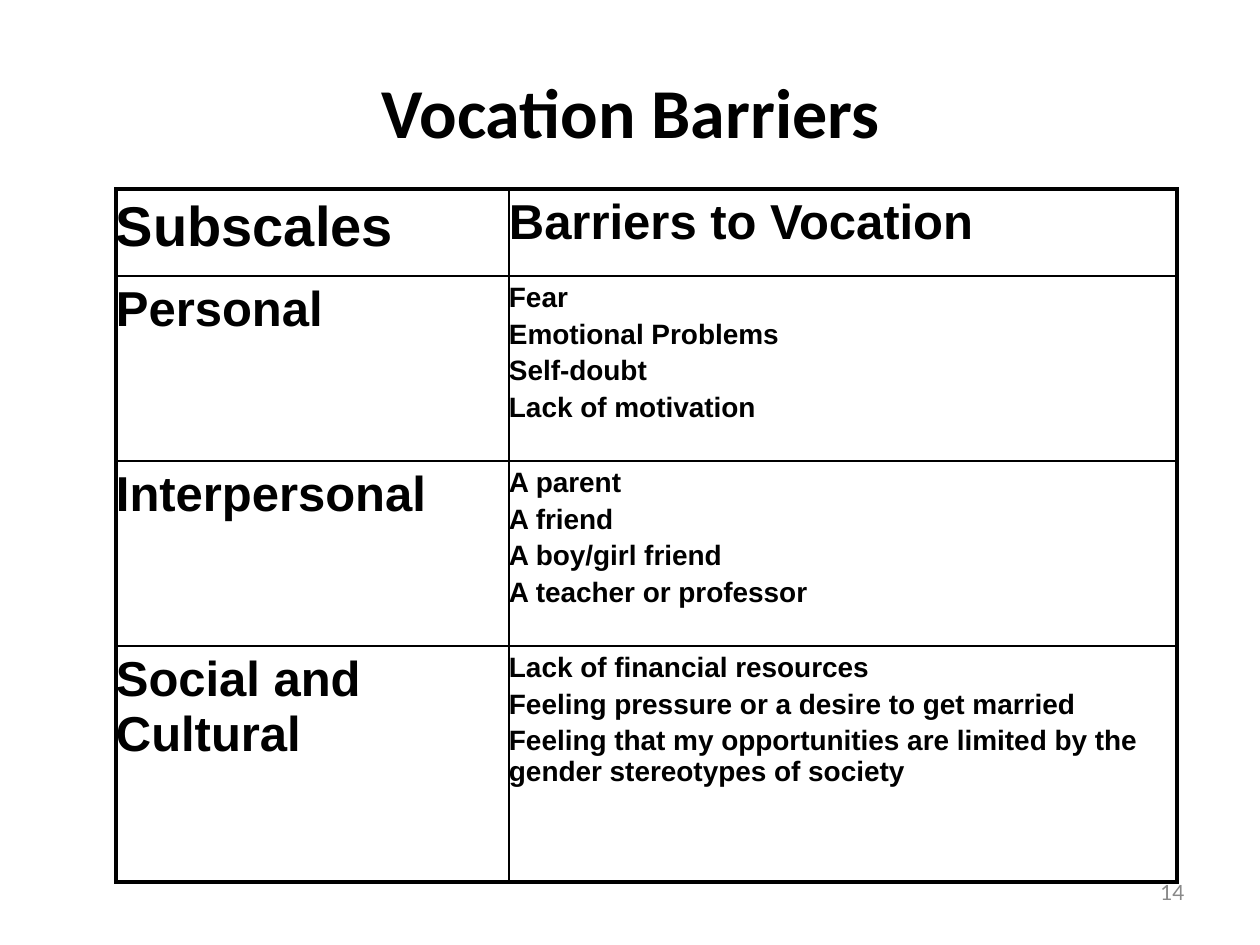
from lxml import etree
from pptx import Presentation
from pptx.dml.color import RGBColor
from pptx.enum.text import MSO_ANCHOR, PP_ALIGN
from pptx.oxml.ns import qn
from pptx.util import Emu, Pt

PX = 914400 // 126  # EMU in one px
BLACK = RGBColor(0x00, 0x00, 0x00)
GRAY = RGBColor(0x89, 0x89, 0x89)
LEFT, CENTER, RIGHT = PP_ALIGN.LEFT, PP_ALIGN.CENTER, PP_ALIGN.RIGHT
MIDDLE = MSO_ANCHOR.MIDDLE
OUTER, INNER = Pt(2.25), Pt(1)

COLUMN_WIDTHS = [393, 668]
ROW_HEIGHTS = [87, 185, 185, 236]
HEADINGS = ["Subscales", "Barriers to Vocation"]
BARRIERS = {
    "Personal": ["Fear", "Emotional Problems", "Self-doubt", "Lack of motivation"],
    "Interpersonal": ["A parent", "A friend", "A boy/girl friend",
                      "A teacher or professor"],
    "Social and Cultural": [
        "Lack of financial resources",
        "Feeling pressure or a desire to get married",
        "Feeling that my opportunities are limited by the "
        "gender stereotypes of society",
    ],
}


def px(length):
    return Emu(length * PX)


def write_text(frame, lines, size, font="Arial", color=BLACK, bold=True,
               align=LEFT, gap=0):
    frame.word_wrap = True
    for index, line in enumerate(lines):
        paragraph = frame.add_paragraph() if index else frame.paragraphs[0]
        paragraph.alignment = align
        paragraph.space_before = Pt(gap if index else 0)
        run = paragraph.add_run()
        run.text = line
        run.font.name = font
        run.font.size = Pt(size)
        run.font.bold = bold
        run.font.color.rgb = color


def add_label(slide, left, top, width, height, text, **text_format):
    frame = slide.shapes.add_textbox(px(left), px(top), px(width), px(height)).text_frame
    frame.vertical_anchor = MIDDLE
    write_text(frame, [text], **text_format)


def set_borders(cell, widths):
    """Draw solid borders; widths maps L, R, T and B to a line width."""
    properties = cell._tc.get_or_add_tcPr()
    for index, side in enumerate("LRTB"):
        line = etree.Element(qn(f"a:ln{side}"), w=str(widths[side]))
        fill = etree.SubElement(line, qn("a:solidFill"))
        etree.SubElement(fill, qn("a:srgbClr"), val=str(BLACK))
        properties.insert(index, line)


def add_barrier_table(slide, left, top):
    row_count, column_count = len(ROW_HEIGHTS), len(COLUMN_WIDTHS)
    table = slide.shapes.add_table(
        row_count, column_count, px(left), px(top),
        px(sum(COLUMN_WIDTHS)), px(sum(ROW_HEIGHTS))).table
    table.first_row = table.horz_banding = False
    for column, width in zip(table.columns, COLUMN_WIDTHS):
        column.width = px(width)
    for row, height in zip(table.rows, ROW_HEIGHTS):
        row.height = px(height)

    # Heavy frame around the table, thin rules inside
    for r in range(row_count):
        for c in range(column_count):
            cell = table.cell(r, c)
            cell.margin_left = cell.margin_right = 0
            cell.fill.background()
            set_borders(cell, {
                "L": OUTER if c == 0 else INNER,
                "R": OUTER if c == column_count - 1 else INNER,
                "T": OUTER if r == 0 else INNER,
                "B": OUTER if r == row_count - 1 else INNER,
            })

    # Headings, then one row for each subscale
    for c, (heading, size) in enumerate(zip(HEADINGS, [32, 28])):
        write_text(table.cell(0, c).text_frame, [heading], size=size)
    for r, (subscale, barriers) in enumerate(BARRIERS.items(), start=1):
        write_text(table.cell(r, 0).text_frame, [subscale], size=28)
        write_text(table.cell(r, 1).text_frame, barriers, size=16, gap=3.2)


def main():
    presentation = Presentation()
    presentation.slide_width, presentation.slide_height = px(1260), px(945)
    slide = presentation.slides.add_slide(presentation.slide_layouts[6])

    # Title
    add_label(slide, 95, 53, 1071, 116, "Vocation Barriers",
              size=40, font="Calibri", align=CENTER)
    # Subscales and their barriers
    add_barrier_table(slide, 116, 189)
    # Slide number
    add_label(slide, 903, 861, 294, 63, "14",
              size=12, font="Lato", color=GRAY, bold=False, align=RIGHT)

    presentation.save("out.pptx")


if __name__ == "__main__":
    main()
